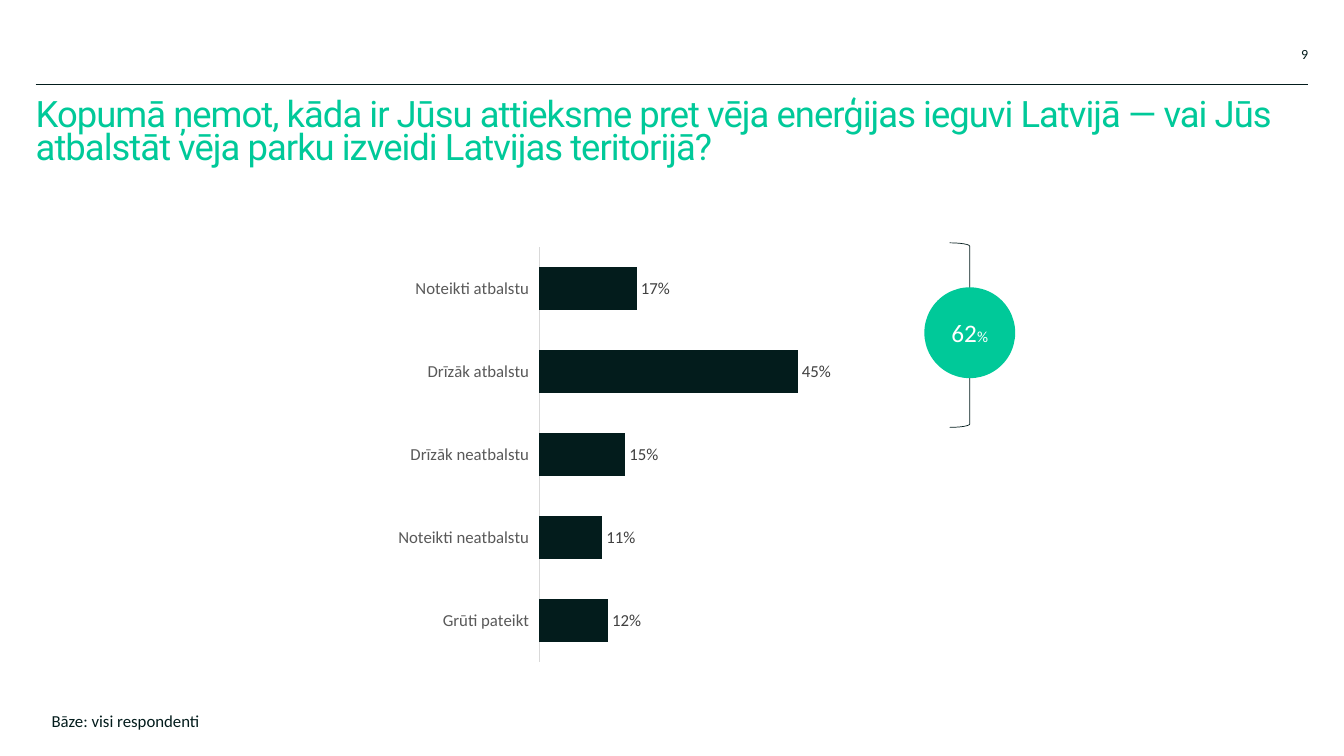
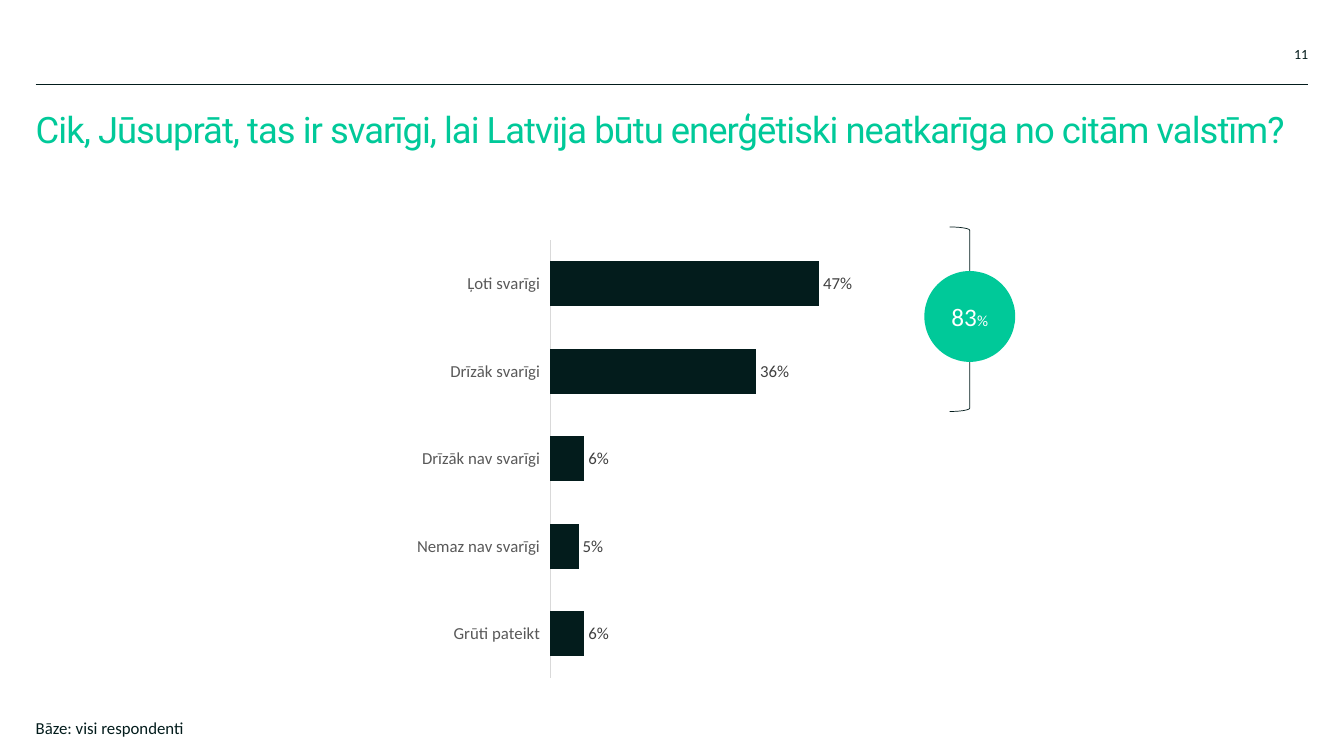
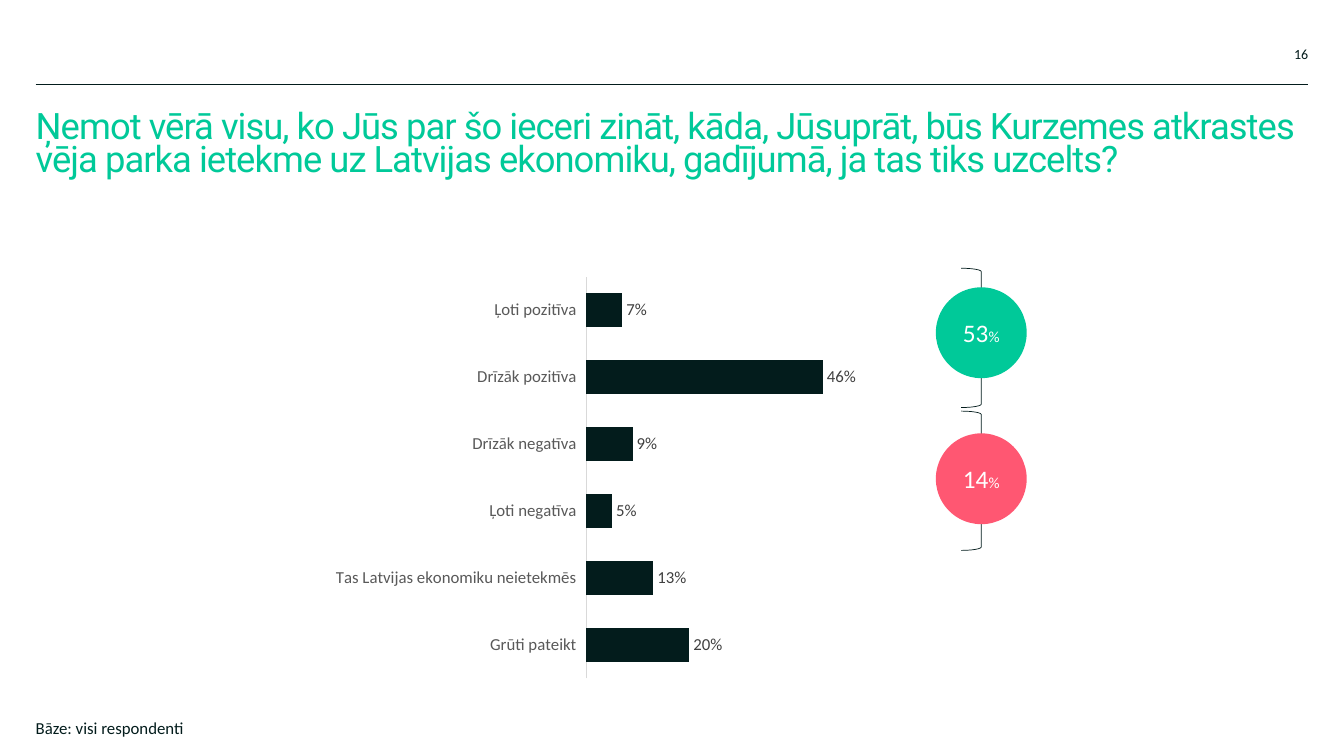
from lxml import etree
from pptx import Presentation
from pptx.chart.data import CategoryChartData
from pptx.dml.color import RGBColor
from pptx.enum.chart import XL_CHART_TYPE, XL_LABEL_POSITION, XL_TICK_LABEL_POSITION, XL_TICK_MARK
from pptx.enum.shapes import MSO_CONNECTOR, MSO_SHAPE
from pptx.enum.text import MSO_ANCHOR, MSO_AUTO_SIZE, PP_ALIGN
from pptx.oxml.ns import qn
from pptx.util import Cm, Pt

BAR = XL_CHART_TYPE.BAR_CLUSTERED
OUTSIDE_END = XL_LABEL_POSITION.OUTSIDE_END
LABELS_LOW = XL_TICK_LABEL_POSITION.LOW
NO_TICK = XL_TICK_MARK.NONE
STRAIGHT = MSO_CONNECTOR.STRAIGHT
BRACE, CIRCLE = MSO_SHAPE.RIGHT_BRACE, MSO_SHAPE.OVAL
TOP, MIDDLE, BOTTOM = MSO_ANCHOR.TOP, MSO_ANCHOR.MIDDLE, MSO_ANCHOR.BOTTOM
LEFT, CENTER, RIGHT = PP_ALIGN.LEFT, PP_ALIGN.CENTER, PP_ALIGN.RIGHT

DARK = RGBColor(0x03, 0x1C, 0x1C)
GREEN = RGBColor(0x00, 0xC9, 0x99)
PINK = RGBColor(0xFF, 0x57, 0x72)
WHITE = RGBColor(0xFF, 0xFF, 0xFF)
BLACK = RGBColor(0x00, 0x00, 0x00)
AXIS_GRAY = RGBColor(0xD9, 0xD9, 0xD9)
CATEGORY_GRAY = RGBColor(0x59, 0x59, 0x59)
LABEL_GRAY = RGBColor(0x40, 0x40, 0x40)

MARGIN, RIGHT_EDGE = 0.9, 32.97
BRACE_WIDTH, CIRCLE_SIZE = 1.02, 2.29
BASE_NOTE = "Bāze: visi respondenti"

# Boxes and plot areas are left, top, width, height; summaries are
# figure, colour, centre x, brace top, brace height, circle top.
SLIDES = [
    {
        "number": "9",
        "title": "Kopumā ņemot, kāda ir Jūsu attieksme pret vēja enerģijas ieguvi Latvijā — "
                 "vai Jūs atbalstāt vēja parku izveidi Latvijas teritorijā?",
        "title_top": 2.69,
        "note_at": (1.3, 17.86),
        "chart_box": (8.03, 6.12, 24.16, 10.57),
        "plot_area": (0.23, 0.01, 0.6, 0.99),
        "answers": {"Noteikti atbalstu": 0.17, "Drīzāk atbalstu": 0.45,
                    "Drīzāk neatbalstu": 0.15, "Noteikti neatbalstu": 0.11,
                    "Grūti pateikt": 0.12},
        "summaries": [("62", GREEN, 24.44, 6.12, 4.65, 7.24)],
    },
    {
        "number": "11",
        "title": "Cik, Jūsuprāt, tas ir svarīgi, lai Latvija būtu enerģētiski neatkarīga "
                 "no citām valstīm?",
        "title_top": 2.69,
        "note_at": (MARGIN, 18.03),
        "chart_box": (8.33, 5.94, 24.05, 11.15),
        "plot_area": (0.23, 0.01, 0.6, 0.99),
        "answers": {"Ļoti svarīgi": 0.47, "Drīzāk svarīgi": 0.36,
                    "Drīzāk nav svarīgi": 0.06, "Nemaz nav svarīgi": 0.05,
                    "Grūti pateikt": 0.06},
        "summaries": [("83", GREEN, 24.44, 5.72, 4.65, 6.83)],
    },
    {
        "number": "16",
        "title": "Ņemot vērā visu, ko Jūs par šo ieceri zināt, kāda, Jūsuprāt, būs Kurzemes "
                 "atkrastes vēja parka ietekme uz Latvijas ekonomiku, gadījumā, ja tas tiks uzcelts?",
        "title_top": 3.0,
        "note_at": (MARGIN, 18.03),
        "chart_box": (5.33, 6.96, 27, 10.24),
        "plot_area": (0.35, 0, 0.48, 0.99),
        "answers": {"Ļoti pozitīva": 0.07, "Drīzāk pozitīva": 0.46, "Drīzāk negatīva": 0.09,
                    "Ļoti negatīva": 0.05, "Tas Latvijas ekonomiku neietekmēs": 0.13,
                    "Grūti pateikt": 0.2},
        "summaries": [("53", GREEN, 24.73, 6.76, 3.51, 7.24),
                      ("14", PINK, 24.73, 10.36, 3.51, 10.92)],
    },
]


def set_all(obj, formats):
    for name, value in formats.items():
        setattr(obj, name, value)


def set_font(font, size, color, name="Calibri"):
    set_all(font, {"size": Pt(size), "name": name, "bold": False})
    font.color.rgb = color


def place(sp, left, top, width, height):
    set_all(sp, {"left": Cm(left), "top": Cm(top), "width": Cm(width), "height": Cm(height)})


def write(sp, text, size, color, font="Calibri", anchor=TOP, **paragraph_format):
    """Put one paragraph in a frame without insets and return its run."""
    tf = sp.text_frame
    set_all(tf, {"margin_left": 0, "margin_top": 0, "margin_right": 0, "margin_bottom": 0,
                 "word_wrap": True, "auto_size": MSO_AUTO_SIZE.NONE, "vertical_anchor": anchor})
    p = tf.paragraphs[0]
    set_all(p, paragraph_format)
    r = p.add_run()
    r.text = text
    set_font(r.font, size, color, font)
    return r


def add_header(s, title, title_top, number):
    rule = s.shapes.add_connector(STRAIGHT, Cm(MARGIN), Cm(2.13), Cm(RIGHT_EDGE), Cm(2.13))
    rule.line.color.rgb = DARK
    rule.line.width = Pt(0.5)
    etree.SubElement(rule.element.spPr, qn("a:effectLst"))

    sp = s.shapes.title
    place(sp, MARGIN, title_top, 32.05, 1.4)
    r = write(sp, title, 26, GREEN, "Roboto", MIDDLE, alignment=LEFT, line_spacing=Pt(23.5))
    r._r.get_or_add_rPr().set("spc", "-70")

    page = s.shapes.add_textbox(Cm(RIGHT_EDGE - 2.36), Cm(1.07), Cm(2.36), Cm(0.51))
    write(page, number, 10, DARK, anchor=BOTTOM, alignment=RIGHT)


def add_base_note(s, left, top):
    sp = s.placeholders[1]
    place(sp, left, top, 28.96, 0.66)
    pPr = sp.text_frame.paragraphs[0]._p.get_or_add_pPr()
    pPr.set("marL", "0")
    pPr.set("indent", "0")
    etree.SubElement(pPr, qn("a:buNone"))
    write(sp, BASE_NOTE, 12, DARK, alignment=LEFT, line_spacing=1.1, space_before=Pt(0))


def set_plot_area(chart, area):
    plot_area = chart.element.find(".//" + qn("c:plotArea"))
    for old in plot_area.findall(qn("c:layout")):
        plot_area.remove(old)
    layout = etree.Element(qn("c:layout"))
    manual = etree.SubElement(layout, qn("c:manualLayout"))
    values = [("layoutTarget", "inner"), ("xMode", "edge"), ("yMode", "edge"),
              *zip("xywh", area)]
    for tag, value in values:
        etree.SubElement(manual, qn("c:" + tag)).set("val", str(value))
    plot_area.insert(0, layout)


def add_bar_chart(s, answers, box, area):
    data = CategoryChartData(number_format="0%")
    data.categories = list(answers)
    data.add_series("Series 1", list(answers.values()))
    chart = s.shapes.add_chart(BAR, *map(Cm, box), data).chart
    set_all(chart, {"has_legend": False, "has_title": False})
    set_font(chart.font, 10, BLACK)

    axis = chart.category_axis
    set_all(axis, {"reverse_order": True, "major_tick_mark": NO_TICK,
                   "minor_tick_mark": NO_TICK, "tick_label_position": LABELS_LOW,
                   "has_major_gridlines": False})
    set_font(axis.tick_labels.font, 12, CATEGORY_GRAY)
    axis.format.line.color.rgb = AXIS_GRAY
    axis.format.line.width = Pt(0.75)
    set_all(chart.value_axis, {"visible": False, "minimum_scale": 0, "maximum_scale": 1,
                               "has_major_gridlines": False})

    plot = chart.plots[0]
    set_all(plot, {"gap_width": 95, "vary_by_categories": False, "has_data_labels": True})
    labels = plot.data_labels
    set_all(labels, {"show_value": True, "position": OUTSIDE_END,
                     "number_format": "0%", "number_format_is_linked": False})
    set_font(labels.font, 12, LABEL_GRAY)
    fill = plot.series[0].format.fill
    fill.solid()
    fill.fore_color.rgb = DARK
    set_plot_area(chart, area)


def add_summary(s, figure, color, center, brace_top, brace_height, circle_top):
    """Brace over a group of bars with the group's total in a circle."""
    brace = s.shapes.add_shape(BRACE, Cm(center - BRACE_WIDTH / 2), Cm(brace_top),
                               Cm(BRACE_WIDTH), Cm(brace_height))
    brace.shadow.inherit = False
    brace.fill.background()
    brace.line.color.rgb = DARK
    brace.line.width = Pt(0.5)

    circle = s.shapes.add_shape(CIRCLE, Cm(center - CIRCLE_SIZE / 2), Cm(circle_top),
                                Cm(CIRCLE_SIZE), Cm(CIRCLE_SIZE))
    circle.shadow.inherit = False
    circle.fill.solid()
    circle.fill.fore_color.rgb = color
    circle.line.fill.background()
    write(circle, figure, 18, WHITE, anchor=MIDDLE, alignment=CENTER)
    r = circle.text_frame.paragraphs[0].add_run()
    r.text = "%"
    set_font(r.font, 11, WHITE)


def main():
    prs = Presentation()
    prs.slide_width, prs.slide_height = Cm(33.87), Cm(19.05)
    for content in SLIDES:
        s = prs.slides.add_slide(prs.slide_layouts[1])
        add_header(s, content["title"], content["title_top"], content["number"])
        add_base_note(s, *content["note_at"])
        add_bar_chart(s, content["answers"], content["chart_box"], content["plot_area"])
        for summary in content["summaries"]:
            add_summary(s, *summary)
    prs.save("out.pptx")


if __name__ == "__main__":
    main()
